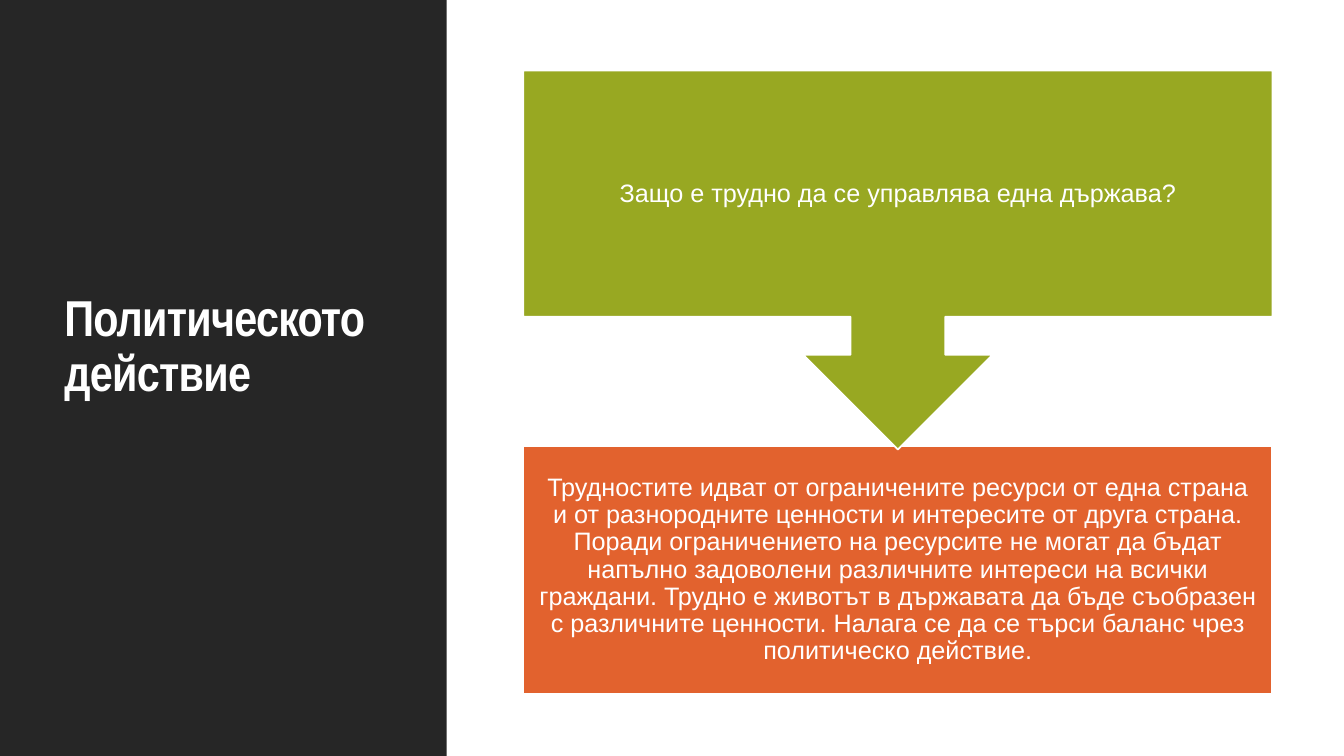
from pptx import Presentation
from pptx.dml.color import RGBColor
from pptx.enum.shapes import MSO_SHAPE
from pptx.enum.text import MSO_ANCHOR, PP_ALIGN
from pptx.util import Inches, Pt

WHITE, DARK, GREEN, ORANGE = "FFFFFF", "262626", "98A822", "E2622E"
LEFT, WIDTH, HEIGHT = 5.19, 7.43, 2.45
TOP, BOTTOM = 0.7, 4.43

TITLE = "Политическото действие"
ASK = "Защо е трудно да се управлява една държава?"
REPLY = (
    "Трудностите идват от ограничените ресурси от една страна и от "
    "разнородните ценности и интересите от друга страна. Поради "
    "ограничението на ресурсите не могат да бъдат напълно задоволени "
    "различните интереси на всички граждани. Трудно е животът в държавата "
    "да бъде съобразен с различните ценности. Налага се да се търси баланс "
    "чрез политическо действие."
)


def color(code):
    return RGBColor.from_string(code)


def add_block(slide, kind, box, fill, line=None):
    shape = slide.shapes.add_shape(kind, *map(Inches, box))
    shape.shadow.inherit = False
    shape.fill.solid()
    shape.fill.fore_color.rgb = color(fill)
    if line:
        shape.line.color.rgb = color(line)
        shape.line.width = Pt(1.25)
    else:
        shape.line.fill.background()
    return shape


def add_box(slide, box):
    return slide.shapes.add_textbox(*map(Inches, box))


def set_text(shape, text, font, size, align, pads):
    """Fill a shape with one white paragraph; pads run left, top, right, bottom."""
    frame = shape.text_frame
    frame.word_wrap = True
    frame.vertical_anchor = MSO_ANCHOR.MIDDLE
    (frame.margin_left, frame.margin_top,
     frame.margin_right, frame.margin_bottom) = map(Inches, pads)
    para = frame.paragraphs[0]
    para.text = text
    para.alignment = align
    para.line_spacing = 0.9
    para.font.name = font
    para.font.size = Pt(size)
    para.font.color.rgb = color(WHITE)
    return para


def add_title(slide):
    box = add_box(slide, (0.54, 0.57, 3.37, 6.31))
    # The deeper bottom margin lifts the title above the middle.
    para = set_text(box, TITLE, "Arial Narrow", 36, PP_ALIGN.LEFT,
                    (0.1, 0.05, 0.1, 0.6))
    para.font.bold = True
    para.runs[0].font._element.set("spc", "-50")


def set_body(shape, text):
    set_text(shape, text, "Arial", 18, PP_ALIGN.CENTER, (0.14,) * 4)


def main():
    deck = Presentation()
    deck.slide_width, deck.slide_height = Inches(13.33), Inches(7.5)
    slide = deck.slides.add_slide(deck.slide_layouts[6])

    add_block(slide, MSO_SHAPE.RECTANGLE, (0, 0, 4.43, 7.5), DARK)
    add_title(slide)

    reply = add_block(slide, MSO_SHAPE.RECTANGLE,
                      (LEFT, BOTTOM, WIDTH, HEIGHT), ORANGE, WHITE)
    set_body(reply, REPLY)

    arrow = add_block(slide, MSO_SHAPE.UP_ARROW_CALLOUT,
                      (LEFT, TOP, WIDTH, 3.76), GREEN, WHITE)
    arrow.rotation = 180
    set_body(add_box(slide, (LEFT, TOP, WIDTH, HEIGHT)), ASK)

    deck.save("out.pptx")


if __name__ == "__main__":
    main()
